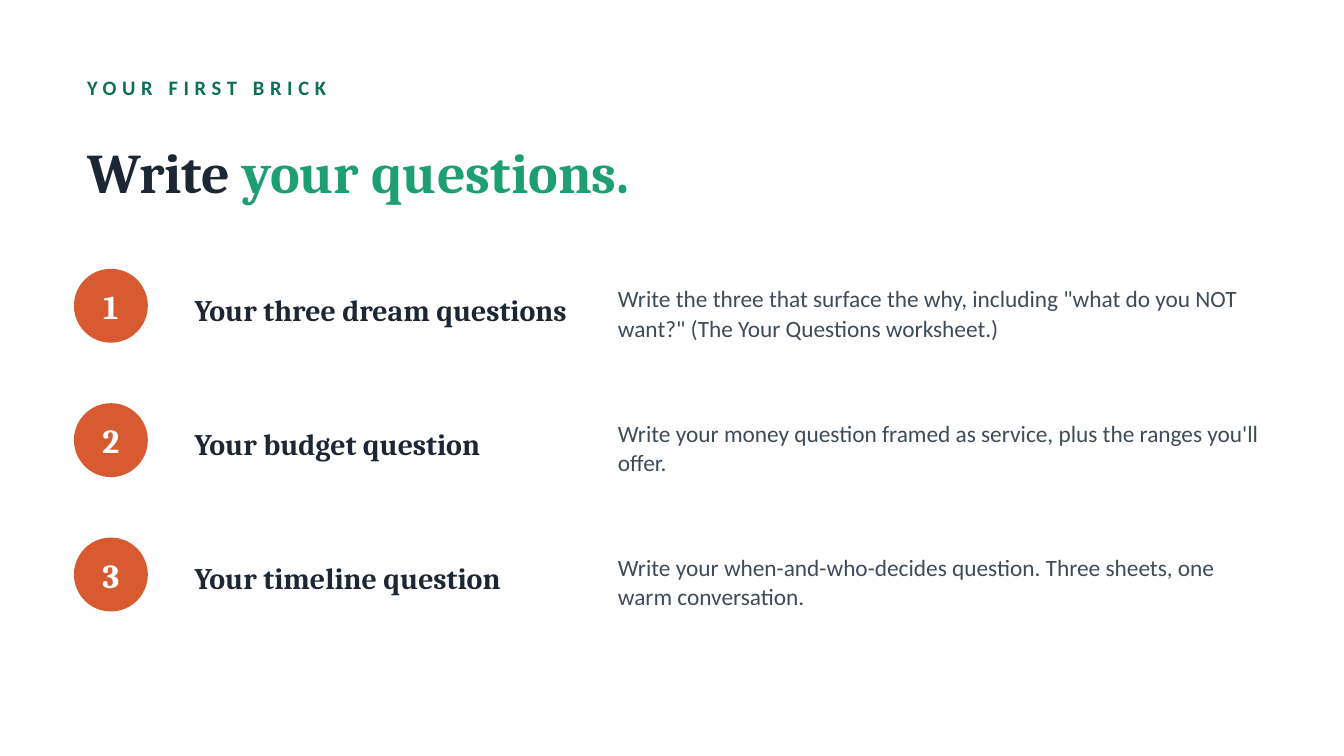
"""Build the "Write your questions" slide with three numbered steps."""
import pptx
import pptx.dml.color
import pptx.enum.shapes
import pptx.enum.text
import pptx.util

Inches = pptx.util.Inches
INK = "1C2733"


def rgb(color):
    return pptx.dml.color.RGBColor.from_string(color)


def add_text(left, top, width, height, text, name, size, color, bold=True):
    box = slide.shapes.add_textbox(Inches(left), Inches(top), Inches(width), Inches(height))
    box.text_frame.word_wrap = True
    box.text_frame.vertical_anchor = pptx.enum.text.MSO_ANCHOR.MIDDLE
    paragraph = box.text_frame.paragraphs[0]
    paragraph.add_run().text = text
    paragraph.font.name = name
    paragraph.font.size = pptx.util.Pt(size)
    paragraph.font.bold = bold
    paragraph.font.color.rgb = rgb(color)
    return paragraph


presentation = pptx.Presentation()
presentation.slide_width = Inches(10)
presentation.slide_height = Inches(10 * 9 / 16)
slide = presentation.slides.add_slide(presentation.slide_layouts[6])

eyebrow = add_text(0.55, 0.5, 8.9, 0.3, "YOUR FIRST BRICK", "Calibri", 11, "0F6E56")
eyebrow.runs[0].font._element.set("spc", "300")

title = add_text(0.55, 0.85, 8.9, 0.85, "Write ", "Cambria", 30, INK)
accent = title.add_run()
accent.text = "your questions."
accent.font.color.rgb = rgb("1D9E75")

steps = [
    ("Your three dream questions",
     'Write the three that surface the why, including "what do you NOT want?" (The Your Questions worksheet.)'),
    ("Your budget question",
     "Write your money question framed as service, plus the ranges you'll offer."),
    ("Your timeline question",
     "Write your when-and-who-decides question. Three sheets, one warm conversation."),
]

for number, (heading, detail) in enumerate(steps, start=1):
    top = 1 + number
    badge = slide.shapes.add_shape(
        pptx.enum.shapes.MSO_SHAPE.OVAL, Inches(0.55), Inches(top), Inches(0.55), Inches(0.55))
    badge.shadow.inherit = False
    badge.fill.solid()
    badge.fill.fore_color.rgb = rgb("D85A30")
    badge.line.fill.background()

    numeral = add_text(0.55, top, 0.55, 0.55, str(number), "Cambria", 18, "FFFFFF")
    numeral.alignment = pptx.enum.text.PP_ALIGN.CENTER
    add_text(1.35, top - 0.05, 3, 0.7, heading, "Cambria", 16, INK)
    description = add_text(4.5, top - 0.05, 5, 0.75, detail, "Calibri", 12.5, "3F4B59", False)
    description.line_spacing = 1.05

presentation.save("out.pptx")
